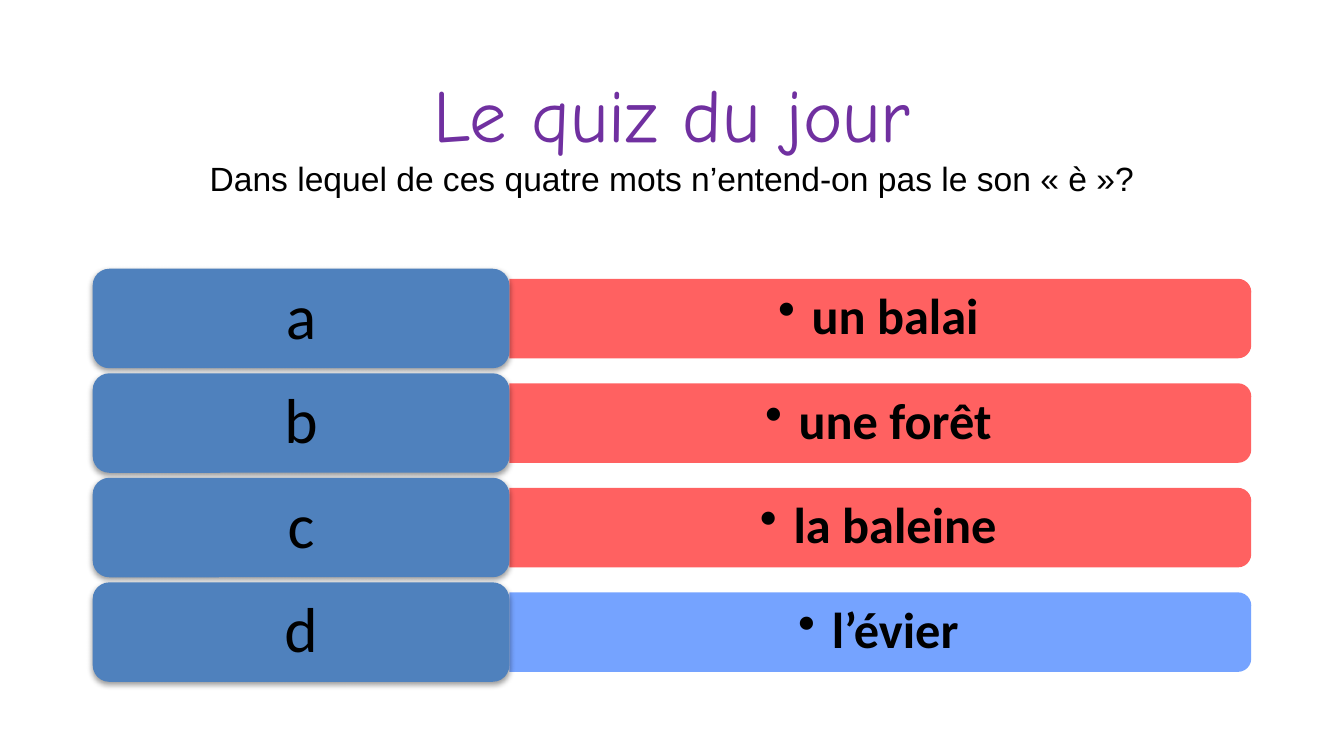
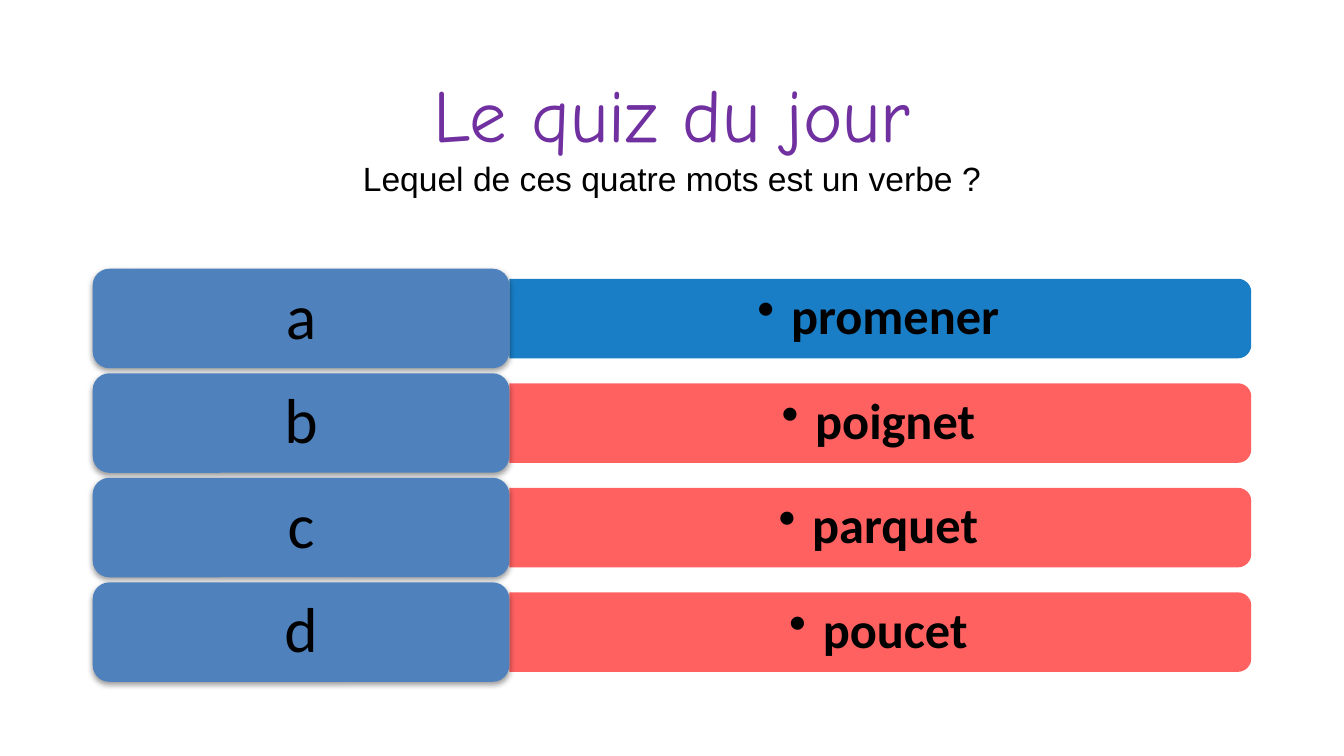
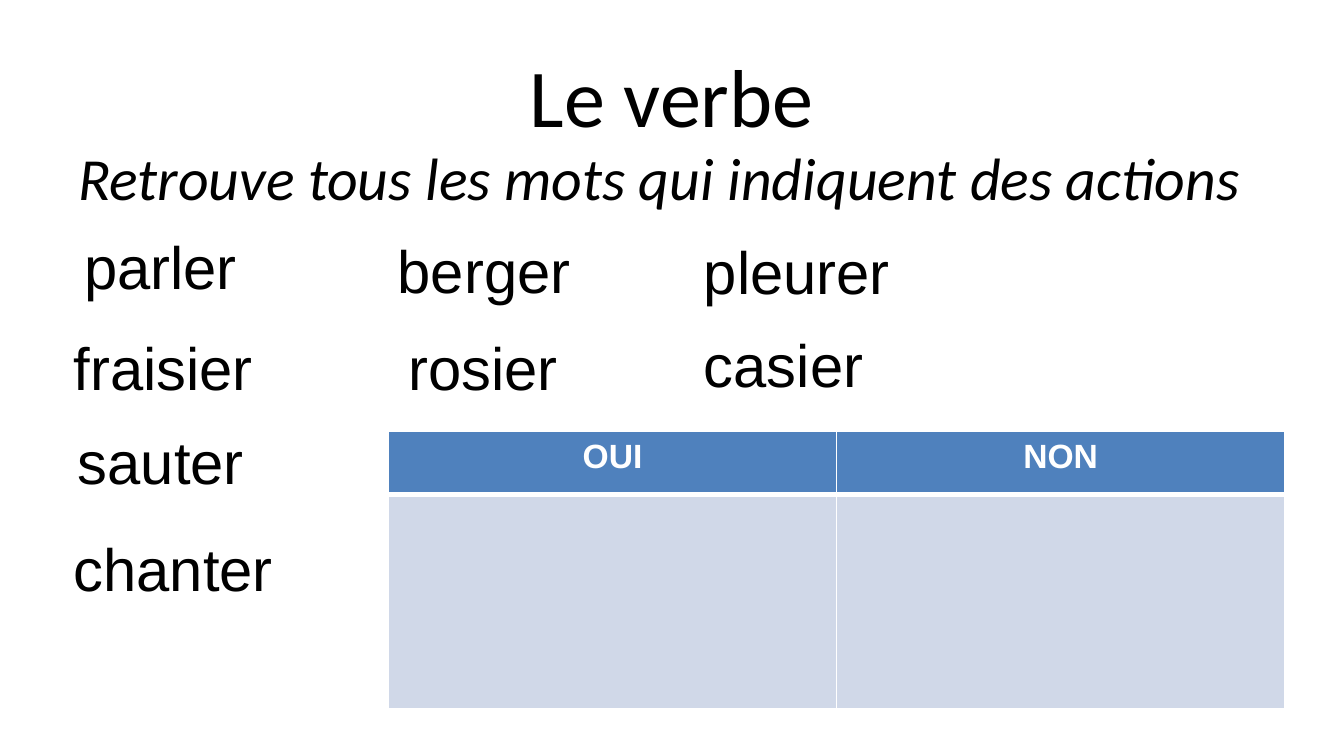
from typing import Any, NamedTuple

from lxml.etree import SubElement
from pptx import Presentation
from pptx.dml.color import RGBColor
from pptx.enum.shapes import MSO_SHAPE as SHAPE
from pptx.enum.text import MSO_ANCHOR as ANCHOR, MSO_AUTO_SIZE as AUTO, PP_ALIGN as ALIGN
from pptx.oxml.ns import qn
from pptx.util import Pt

BLACK = RGBColor(0x00, 0x00, 0x00)
WHITE = RGBColor(0xFF, 0xFF, 0xFF)
PURPLE = RGBColor(0x70, 0x30, 0xA0)
BLUE = RGBColor(0x4F, 0x81, 0xBD)
PALE_BLUE = RGBColor(0xD0, 0xD8, 0xE8)
RED = RGBColor(0xFF, 0x50, 0x50)
SKY = RGBColor(0x66, 0x99, 0xFF)
DEEP_BLUE = RGBColor(0x00, 0x70, 0xC0)

TITLE_ONLY, TITLE_AND_CONTENT = 5, 1

QUIZ_FONT = {"name": "Comic Neue", "size": Pt(40)}
QUESTION_FONT = {"name": "Arial", "size": Pt(18)}
LETTER_FONT = {"name": "Calibri", "size": Pt(34)}
ANSWER_FONT = {"name": "Calibri", "size": Pt(27), "bold": True}
TITLE_FONT = {"name": "Calibri", "size": Pt(44)}
TASK_FONT = {"name": "Calibri", "size": Pt(32), "italic": True}
WORD_FONT = {"name": "Arial", "size": Pt(32)}
HEADER_FONT = {"name": "Arial", "size": Pt(18), "bold": True}


class Box(NamedTuple):
    left: float
    top: float
    width: float
    height: float

    def emu(self) -> list[Pt]:
        return [Pt(v) for v in self]


class Answer(NamedTuple):
    text: str
    color: RGBColor = RED


class Quiz(NamedTuple):
    question: str
    answers: list[Answer]


class Word(NamedTuple):
    text: str
    left: float
    top: float
    width: float


QUIZ_TITLE = Box(49.7, 14.4, 620.6, 113.8)
KEY = Box(49.7, 144, 223.2, 53.3)
ROW_PITCH = 56
BAR_LENGTH, BAR_THICKNESS, ANSWER_HEIGHT = 397.4, 42.6, 38.2
ANSWER_WIDTH = 395.3
WORD_HEIGHT = 46

QUIZZES = [
    Quiz("Dans lequel de ces quatre mots n’entend-on pas le son « è »?",
         [Answer("un balai"), Answer("une forêt"), Answer("la baleine"), Answer("l’évier", SKY)]),
    Quiz("Lequel de ces quatre mots est un verbe ?",
         [Answer("promener", DEEP_BLUE), Answer("poignet"), Answer("parquet"), Answer("poucet")]),
]

WORDS = [
    Word("parler", 38, 119.5, 97.2),
    Word("berger", 206, 121.7, 107.3),
    Word("pleurer", 370, 122.4, 115.2),
    Word("fraisier", 32.4, 173.5, 111.6),
    Word("rosier", 211.7, 173.5, 95),
    Word("casier", 370, 172, 100.8),
    Word("sauter", 34.6, 224, 104.4),
    Word("chanter", 32.4, 281.5, 122.4),
]


def set_attrs(obj: Any, fmt: dict[str, Any]) -> None:
    for name, value in fmt.items():
        setattr(obj, name, value)


def add_run(p: Any, text: str, font: dict[str, Any], color: RGBColor = BLACK) -> None:
    r = p.add_run()
    r.text = text
    set_attrs(r.font, font)
    r.font.color.rgb = color


def set_margins(tf: Any, side: float, end: float) -> None:
    set_attrs(tf, {"margin_left": Pt(side), "margin_right": Pt(side),
                   "margin_top": Pt(end), "margin_bottom": Pt(end),
                   "word_wrap": True, "vertical_anchor": ANCHOR.MIDDLE})


def place(sp: Any, box: Box) -> Any:
    set_attrs(sp, dict(zip(("left", "top", "width", "height"), box.emu())))
    sp.text_frame.auto_size = AUTO.NONE
    return sp.text_frame.paragraphs[0]


def add_filled(shapes: Any, kind: SHAPE, box: Box, color: RGBColor) -> Any:
    sp = shapes.add_shape(kind, *box.emu())
    sp.shadow.inherit = False
    sp.fill.solid()
    sp.fill.fore_color.rgb = color
    sp.line.fill.background()
    return sp


def set_alpha(clr: Any, percent: int) -> None:
    SubElement(clr, qn("a:alpha"), val=str(percent * 1000))


def add_shadow(sp: Any) -> None:
    effects = sp._element.spPr.find(qn("a:effectLst"))
    shadow = SubElement(effects, qn("a:outerShdw"), blurRad=str(Pt(3.1)), dist=str(Pt(1.6)),
                        dir="5400000", rotWithShape="0")
    set_alpha(SubElement(shadow, qn("a:srgbClr"), val=str(BLACK)), 38)


def add_bullet(p: Any) -> None:
    pPr = p._p.get_or_add_pPr()
    pPr.set("marL", str(Pt(18)))
    pPr.set("indent", str(Pt(-18)))
    SubElement(pPr, qn("a:buChar"), char="•")


def add_answer(shapes: Any, row: int, letter: str, answer: Answer) -> None:
    top = KEY.top + row * ROW_PITCH
    middle = top + KEY.height / 2
    bar_left = KEY.left + KEY.width

    bar_box = Box(bar_left + (BAR_LENGTH - BAR_THICKNESS) / 2, middle - BAR_LENGTH / 2,
                  BAR_THICKNESS, BAR_LENGTH)
    bar = add_filled(shapes, SHAPE.ROUND_2_SAME_RECTANGLE, bar_box, answer.color)
    bar.rotation = 90
    set_alpha(bar.fill._xPr.find(qn("a:solidFill"))[0], 90)

    label = Box(bar_left, middle - ANSWER_HEIGHT / 2, ANSWER_WIDTH, ANSWER_HEIGHT)
    tf = shapes.add_textbox(*label.emu()).text_frame
    set_margins(tf, 8, 4)
    p = tf.paragraphs[0]
    set_attrs(p, {"alignment": ALIGN.CENTER, "line_spacing": 0.9, "level": 1})
    add_bullet(p)
    add_run(p, answer.text, ANSWER_FONT)

    key = add_filled(shapes, SHAPE.ROUNDED_RECTANGLE, KEY._replace(top=top), BLUE)
    add_shadow(key)
    set_margins(key.text_frame, 10, 5)
    p = key.text_frame.paragraphs[0]
    set_attrs(p, {"alignment": ALIGN.CENTER, "line_spacing": 0.9})
    add_run(p, letter, LETTER_FONT)


def add_quiz(prs: Any, quiz: Quiz) -> None:
    slide = prs.slides.add_slide(prs.slide_layouts[TITLE_ONLY])
    p = place(slide.shapes.title, QUIZ_TITLE)
    add_run(p, "Le quiz du jour", QUIZ_FONT, PURPLE)
    p.add_line_break()
    add_run(p, quiz.question, QUESTION_FONT)
    group = slide.shapes.add_group_shape()
    for row, (letter, answer) in enumerate(zip("abcd", quiz.answers)):
        add_answer(group.shapes, row, letter, answer)


def style_cell(cell: Any, color: RGBColor, borders: dict[str, float]) -> None:
    tcPr = cell._tc.get_or_add_tcPr()
    for side, width in borders.items():
        ln = SubElement(tcPr, qn(f"a:ln{side}"), w=str(Pt(width)))
        SubElement(SubElement(ln, qn("a:solidFill")), qn("a:srgbClr"), val=str(WHITE))
    cell.fill.solid()
    cell.fill.fore_color.rgb = color


def add_sorting_table(slide: Any) -> None:
    box = Box(208.1, 231.1, 480.2, 148.8)
    table = slide.shapes.add_table(2, 2, *box.emu()).table
    for row, height in zip(table.rows, (33.6, 115.2)):
        row.height = Pt(height)
    for col, heading in enumerate(("OUI", "NON")):
        head, body = table.cell(0, col), table.cell(1, col)
        style_cell(head, BLUE, {"L": 1, "R": 1, "T": 1, "B": 3})
        style_cell(body, PALE_BLUE, {"L": 1, "R": 1, "T": 3, "B": 1})
        p = head.text_frame.paragraphs[0]
        p.alignment = ALIGN.CENTER
        add_run(p, heading, HEADER_FONT, WHITE)


def add_word(slide: Any, word: Word) -> None:
    box = Box(word.left, word.top, word.width, WORD_HEIGHT)
    tf = slide.shapes.add_textbox(*box.emu()).text_frame
    set_attrs(tf, {"word_wrap": False, "auto_size": AUTO.SHAPE_TO_FIT_TEXT})
    add_run(tf.paragraphs[0], word.text, WORD_FONT)


def add_verb_slide(prs: Any) -> None:
    slide = prs.slides.add_slide(prs.slide_layouts[TITLE_AND_CONTENT])
    add_run(place(slide.shapes.title, Box(36, 16.6, 648, 67.7)), "Le verbe", TITLE_FONT)
    p = place(slide.placeholders[1], Box(34.6, 72, 648, 56.9))
    SubElement(p._p.get_or_add_pPr(), qn("a:buNone"))
    add_run(p, "Retrouve tous les mots qui indiquent des actions", TASK_FONT)
    add_sorting_table(slide)
    for word in WORDS:
        add_word(slide, word)


def main() -> None:
    prs = Presentation()
    set_attrs(prs, {"slide_width": Pt(720), "slide_height": Pt(405)})
    for quiz in QUIZZES:
        add_quiz(prs, quiz)
    add_verb_slide(prs)
    prs.save("out.pptx")


if __name__ == "__main__":
    main()
